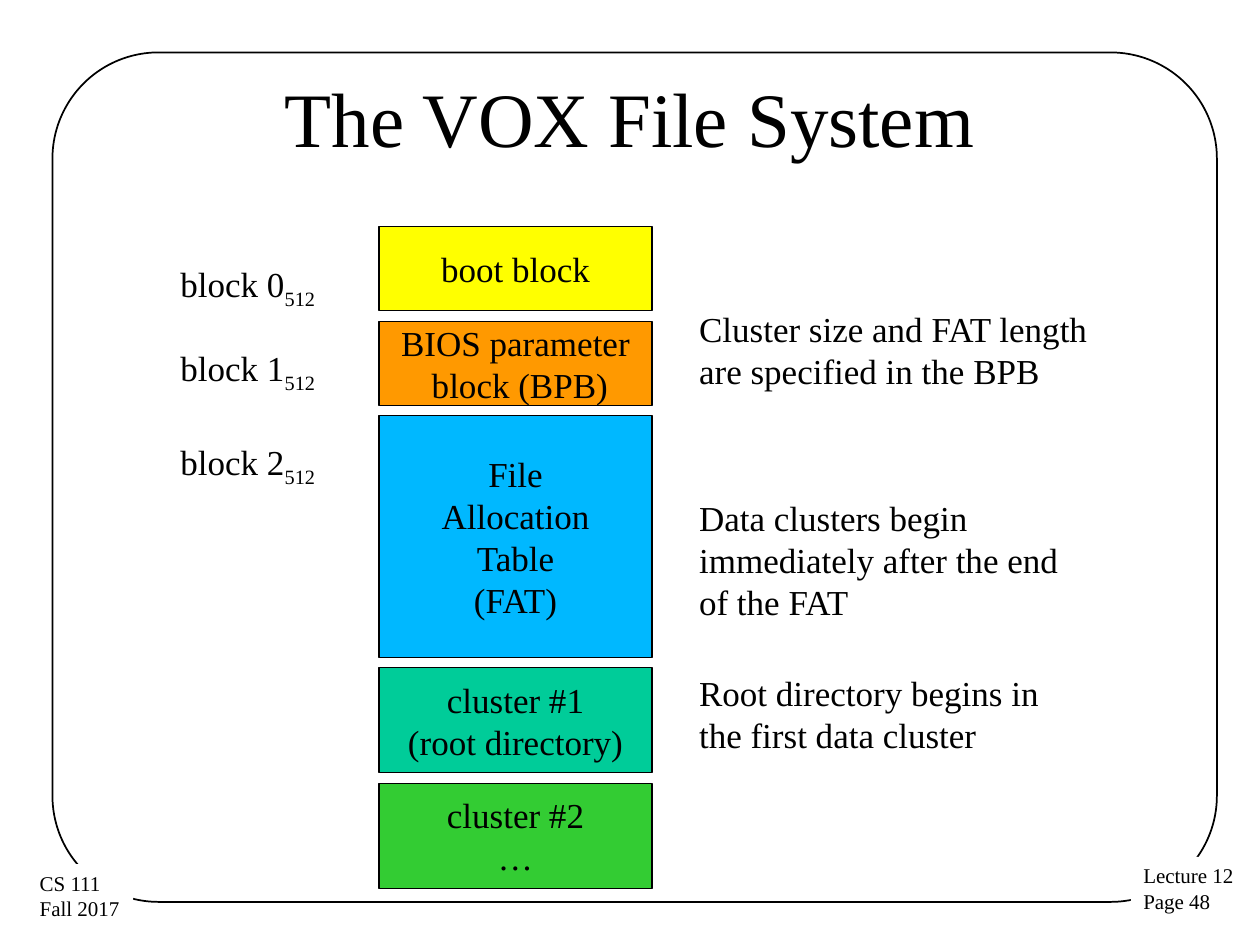
from pptx import Presentation
from pptx.dml.color import RGBColor
from pptx.enum.shapes import MSO_SHAPE
from pptx.enum.text import MSO_ANCHOR, PP_ALIGN
from pptx.util import Pt

PX = 7620
RECT, ROUND = MSO_SHAPE.RECTANGLE, MSO_SHAPE.ROUNDED_RECTANGLE
TOP, MIDDLE = MSO_ANCHOR.TOP, MSO_ANCHOR.MIDDLE
LEFT, CENTER, RIGHT = PP_ALIGN.LEFT, PP_ALIGN.CENTER, PP_ALIGN.RIGHT

FONT = "Times New Roman"
BLACK = RGBColor(0x00, 0x00, 0x00)
WHITE = RGBColor(0xFF, 0xFF, 0xFF)
YELLOW = RGBColor(0xFF, 0xFF, 0x00)
ORANGE = RGBColor(0xFF, 0x99, 0x00)
BLUE = RGBColor(0x00, 0xB8, 0xFF)
TEAL = RGBColor(0x00, 0xCC, 0x99)
GREEN = RGBColor(0x33, 0xCC, 0x33)

BLOCKS = [
    ("boot block", 80, YELLOW),
    ("BIOS parameter\n block (BPB)", 80, ORANGE),
    ("File\nAllocation\vTable\n(FAT)", 230, BLUE),
    ("cluster #1\n(root directory)", 100, TEAL),
    ("cluster #2\n…", 100, GREEN),
]
LABELS = [("block 0", 0), ("block 1", 80), ("block 2", 170)]
NOTES = [
    ("Cluster size and FAT length are specified in the BPB", 0, 438, 92),
    ("Data clusters begin immediately after the end of the FAT", 180, 391, 133),
    ("Root directory begins in the first data cluster", 347, 391, 92),
]


def emu(*lengths):
    """Turn px lengths into EMU."""
    return [n * PX for n in lengths]


def set_text(sp, text, size=20, align=LEFT, anchor=TOP, wrap=True):
    """Write text into a shape and format its runs."""
    tf = sp.text_frame
    tf.text = text
    tf.word_wrap = wrap
    tf.vertical_anchor = anchor
    for p in tf.paragraphs:
        p.alignment = align
        for r in p.runs:
            r.font.name, r.font.size = FONT, Pt(size)
            r.font.color.rgb = BLACK


def add_text(s, box, text, **style):
    """Add a text box."""
    sp = s.shapes.add_textbox(*emu(*box))
    set_text(sp, text, **style)
    return sp


def add_box(s, box, fill=None, line=None, kind=RECT):
    """Add a flat shape with an optional fill and line width."""
    sp = s.shapes.add_shape(kind, *emu(*box))
    sp.shadow.inherit = False
    if fill is None:
        sp.fill.background()
    else:
        sp.fill.solid()
        sp.fill.fore_color.rgb = fill
    if line is None:
        sp.line.fill.background()
    else:
        sp.line.color.rgb = BLACK
        sp.line.width = Pt(line)
    return sp


def add_frame(s, x, y, w, h):
    """Draw the rounded border with its two corner captions."""
    frame = add_box(s, (x, y, w, h), line=1, kind=ROUND)
    frame.adjustments[0] = 0.125
    for text, dx, dy, cw in (
        ("Lecture 12\nPage 48", 1027, 766, 112),
        ("CS 111\nFall 2017", -24, 773, 101),
    ):
        sp = add_box(s, (x + dx, y + dy, cw, 61), fill=WHITE)
        set_text(sp, text, size=12, wrap=False)


def add_blocks(s, x, y, w, gap):
    """Stack the disk regions from top to bottom."""
    for text, h, color in BLOCKS:
        sp = add_box(s, (x, y, w, h), fill=color, line=0.75)
        set_text(sp, text, align=CENTER, anchor=MIDDLE, wrap=False)
        y += h + gap


def add_labels(s, x, y, w, h):
    """Place the block numbers with their block size as subscript."""
    for text, dy in LABELS:
        sp = add_text(s, (x, y + dy, w, h), text, align=RIGHT)
        r = sp.text_frame.paragraphs[0].add_run()
        r.text = "512"
        r.font.name, r.font.size = FONT, Pt(20)
        r.font.color.rgb = BLACK
        r._r.get_or_add_rPr().set("baseline", "-25000")


def add_notes(s, x, y):
    """Place the remarks beside the stack."""
    for text, dy, w, h in NOTES:
        add_text(s, (x, y + dy, w, h), text)


def main():
    """Build the slide and save it."""
    prs = Presentation()
    prs.slide_width, prs.slide_height = emu(1200, 900)
    s = prs.slides.add_slide(prs.slide_layouts[6])
    add_frame(s, 50, 50, 1109, 809)
    add_text(s, (60, 36, 1080, 150), "The VOX File System",
             size=44, align=CENTER, anchor=MIDDLE)
    add_blocks(s, 361, 216, 260, 10)
    add_labels(s, 72, 244, 240, 52)
    add_notes(s, 654, 287)
    prs.save("out.pptx")


if __name__ == "__main__":
    main()
